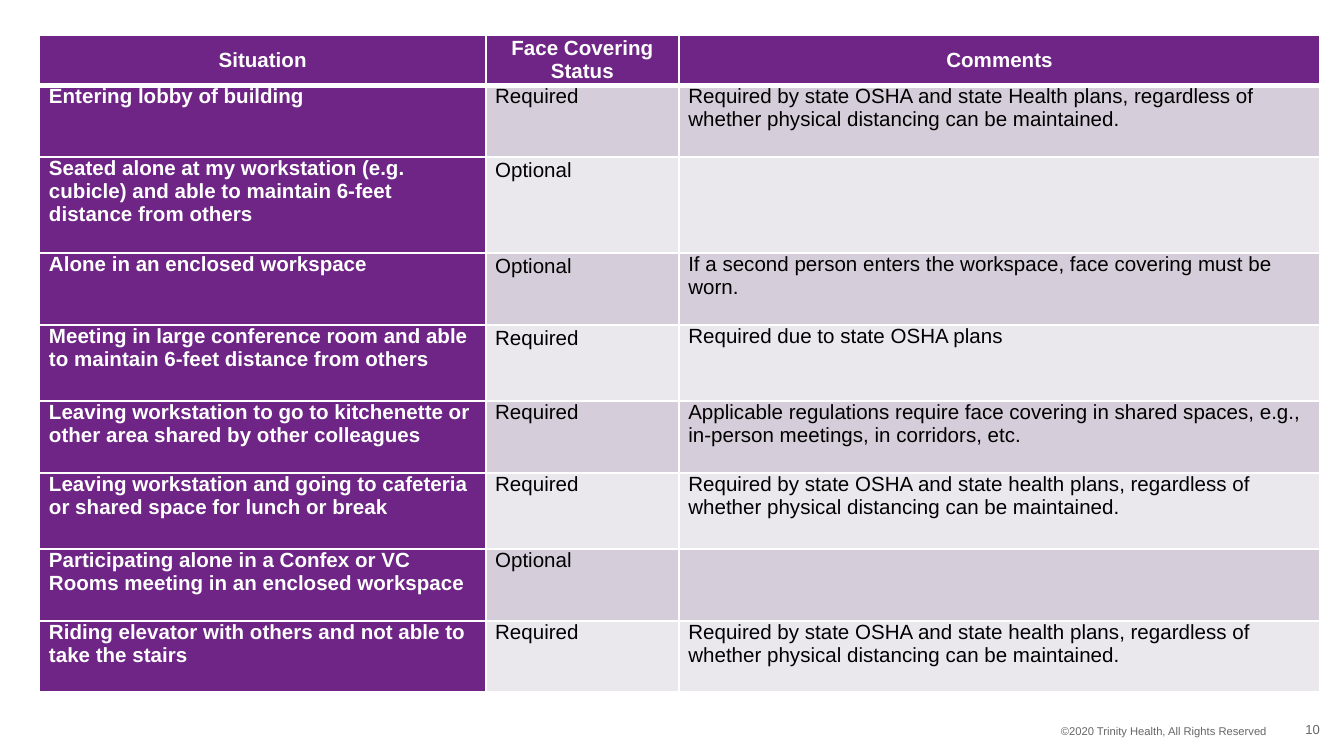
from lxml.etree import SubElement
from pptx import Presentation
from pptx.dml.color import RGBColor
from pptx.enum.text import MSO_ANCHOR, PP_ALIGN
from pptx.oxml.ns import qn
from pptx.util import Pt

COLORS = {
    "purple": "6E2585",
    "dark_band": "D5CDD9",
    "light_band": "EBE8ED",
    "white": "FFFFFF",
    "black": "000000",
    "gray": "666666",
}
FONT = "Arial"
HEADINGS = ["Situation", "Face Covering Status", "Comments"]
HEALTH_PLANS = ("Required by state OSHA and state {} plans, regardless of "
                "whether physical distancing can be maintained.")
SITUATIONS = [
    ("Entering lobby of building", "Required", HEALTH_PLANS.format("Health")),
    ("Seated alone at my workstation (e.g. cubicle) and able to maintain "
     "6-feet distance from others", "Optional", ""),
    ("Alone in an enclosed workspace", "Optional",
     "If a second person enters the workspace, face covering must be worn."),
    ("Meeting in large conference room and able to maintain 6-feet distance "
     "from others", "Required", "Required due to state OSHA plans"),
    ("Leaving workstation to go to kitchenette or other area shared by other "
     "colleagues", "Required",
     "Applicable regulations require face covering in shared spaces, e.g., "
     "in-person meetings, in corridors, etc."),
    ("Leaving workstation and going to cafeteria or shared space for lunch or "
     "break", "Required", HEALTH_PLANS.format("health")),
    ("Participating alone in a Confex or VC Rooms meeting in an enclosed "
     "workspace", "Optional", ""),
    ("Riding elevator with others and not able to take the stairs",
     "Required", HEALTH_PLANS.format("health")),
]
LOOSE_STATUS_ROWS = (2, 3, 4)  # status set with wider line spacing
COLUMN_WIDTHS = [239, 103.5, 343.5]
ROW_HEIGHTS = [27, 38.5, 51.5, 38.5, 40.75, 38.5, 40.75, 38.5, 38]


def color(name):
    return RGBColor.from_string(COLORS[name])


def add_run(paragraph, text, size, color_name, bold=False):
    run = paragraph.add_run()
    run.text = text
    run.font.name = FONT
    run.font.size = Pt(size)
    run.font.bold = bold
    run.font.color.rgb = color(color_name)


def set_borders(cell, top=1, bottom=1):
    properties = cell._tc.get_or_add_tcPr()
    for side, width in (("L", 1), ("R", 1), ("T", top), ("B", bottom)):
        line = SubElement(properties, qn(f"a:ln{side}"), w=str(Pt(width)))
        fill = SubElement(line, qn("a:solidFill"))
        SubElement(fill, qn("a:srgbClr"), val=COLORS["white"])


def format_cell(cell, text, row, column):
    is_header = row == 0
    is_purple = is_header or column == 0
    set_borders(cell, top=3 if row == 1 else 1, bottom=3 if is_header else 1)
    band = "dark_band" if row % 2 else "light_band"
    cell.fill.solid()
    cell.fill.fore_color.rgb = color("purple" if is_purple else band)
    cell.margin_left = cell.margin_right = Pt(5)
    cell.margin_top = cell.margin_bottom = Pt(0)
    cell.vertical_anchor = MSO_ANCHOR.MIDDLE if is_header else MSO_ANCHOR.TOP
    if not text:
        return
    paragraph = cell.text_frame.paragraphs[0]
    paragraph.alignment = PP_ALIGN.CENTER if is_header else PP_ALIGN.LEFT
    if column == 1 and row in LOOSE_STATUS_ROWS:
        paragraph.line_spacing = 1.07
    add_run(paragraph, text, 11, "white" if is_purple else "black", is_purple)


def add_situation_table(slide, left, top, width, height):
    rows = [HEADINGS, *SITUATIONS]
    table = slide.shapes.add_table(len(rows), len(HEADINGS), Pt(left), Pt(top),
                                   Pt(width), Pt(height)).table
    for column, column_width in zip(table.columns, COLUMN_WIDTHS):
        column.width = Pt(column_width)
    for row, row_height in zip(table.rows, ROW_HEIGHTS):
        row.height = Pt(row_height)
    for r, texts in enumerate(rows):
        for c, text in enumerate(texts):
            format_cell(table.cell(r, c), text, r, c)


def add_footer_text(slide, text, size, left, top, width, height,
                    anchor=MSO_ANCHOR.TOP, right_inset=7.2):
    frame = slide.shapes.add_textbox(Pt(left), Pt(top), Pt(width),
                                     Pt(height)).text_frame
    frame.word_wrap = True
    frame.vertical_anchor = anchor
    frame.margin_right = Pt(right_inset)
    paragraph = frame.paragraphs[0]
    paragraph.alignment = PP_ALIGN.RIGHT
    add_run(paragraph, text, size, "gray")


def add_footer(slide, left, top, width, height):
    # Copyright line
    add_footer_text(slide, "©2020 Trinity Health, All Rights Reserved", 6,
                    left, top + 4.5, width - 21.5, 14.5)
    # Page number, flush with the right edge
    add_footer_text(slide, "10", 7, left + width - 31.5, top, 31.5, height,
                    MSO_ANCHOR.MIDDLE, 0)


def main():
    presentation = Presentation()
    presentation.slide_width = Pt(720)
    presentation.slide_height = Pt(405)
    slide = presentation.slides.add_slide(presentation.slide_layouts[6])
    add_situation_table(slide, 21.25, 18.75, sum(COLUMN_WIDTHS),
                        sum(ROW_HEIGHTS))
    add_footer(slide, 383.75, 380, 323.25, 21.5)
    presentation.save("out.pptx")


if __name__ == "__main__":
    main()
